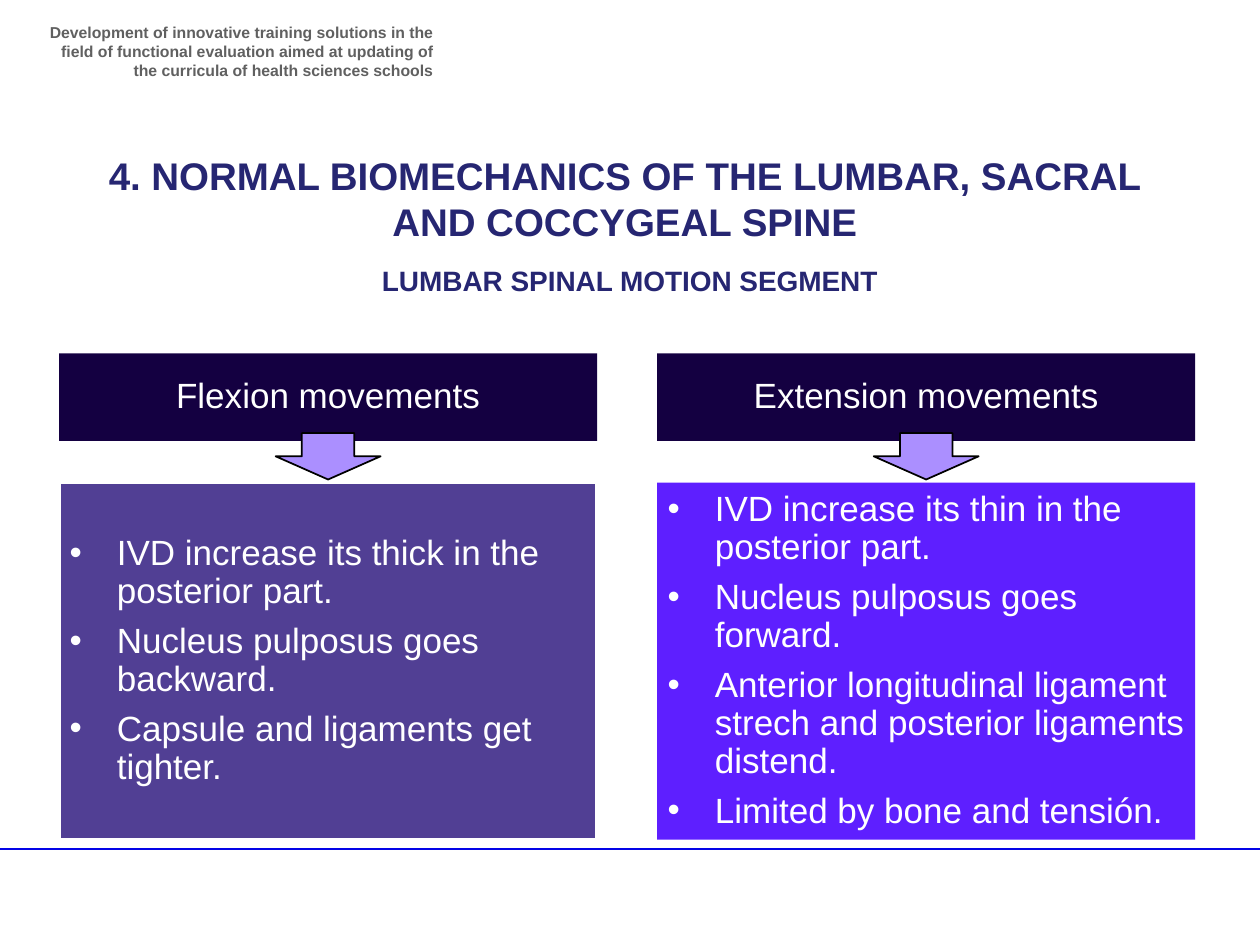
from dataclasses import dataclass

from lxml import etree
from pptx import Presentation
from pptx.dml.color import RGBColor
from pptx.enum import shapes, text
from pptx.oxml.ns import qn
from pptx.util import Pt


@dataclass(frozen=True)
class Theme:
    font: str = "Arial"
    heading: str = "262672"
    project: str = "606060"
    rule: str = "0404E6"
    header: str = "140041"
    flexion: str = "513F94"
    extension: str = "5E1FFF"
    arrow: str = "AB8FFF"
    outline: str = "000000"
    light: str = "FFFFFF"
    title_size: float = 22
    subtitle_size: float = 16
    panel_size: float = 20
    project_size: float = 9


@dataclass(frozen=True)
class Box:
    left: float
    top: float
    width: float
    height: float

    def lengths(self) -> tuple:
        return Pt(self.left), Pt(self.top), Pt(self.width), Pt(self.height)


@dataclass(frozen=True)
class Movement:
    name: str
    effects: tuple[str, ...]
    color: str
    left: float
    border: str | None = None


THEME = Theme()
PANEL_WIDTH = 307.5
PANEL_INSET = 6
BULLET_INDENT = 27
ARROW_WIDTH = 60

MOVEMENTS = (
    Movement(
        "Flexion movements",
        (
            "IVD increase its thick in the posterior part.",
            "Nucleus pulposus goes backward.",
            "Capsule and ligaments get tighter.",
        ),
        THEME.flexion, 33.75, border=THEME.light,
    ),
    Movement(
        "Extension movements",
        (
            "IVD increase its thin in the posterior part.",
            "Nucleus pulposus goes forward.",
            "Anterior longitudinal ligament strech and posterior ligaments distend.",
            "Limited by bone and tensión.",
        ),
        THEME.extension, 375.5,
    ),
)


def set_font(paragraph, size: float, color: str, bold: bool = False) -> None:
    font = paragraph.font
    font.name, font.size, font.bold = THEME.font, Pt(size), bold
    font.color.rgb = RGBColor.from_string(color)


def write_heading(shape, words: str, size: float, color: str, align) -> None:
    frame = shape.text_frame
    frame.word_wrap = True
    frame.auto_size = text.MSO_AUTO_SIZE.NONE
    frame.vertical_anchor = text.MSO_ANCHOR.TOP
    frame.text = words
    frame.paragraphs[0].alignment = align
    set_font(frame.paragraphs[0], size, color, bold=True)


def add_block(slide, kind, box: Box, fill: str, border: str | None = None,
              border_width: float = 1):
    block = slide.shapes.add_shape(kind, *box.lengths())
    block.shadow.inherit = False
    block.fill.solid()
    block.fill.fore_color.rgb = RGBColor.from_string(fill)
    if border:
        block.line.color.rgb = RGBColor.from_string(border)
        block.line.width = Pt(border_width)
    else:
        block.line.fill.background()
    return block


def add_bullet(paragraph) -> None:
    properties = paragraph._p.get_or_add_pPr()
    properties.set("marL", str(Pt(BULLET_INDENT)))
    properties.set("indent", str(-Pt(BULLET_INDENT)))
    color = etree.SubElement(properties, qn("a:buClr"))
    etree.SubElement(color, qn("a:srgbClr"), val=THEME.light)
    etree.SubElement(properties, qn("a:buFont"), typeface=THEME.font)
    etree.SubElement(properties, qn("a:buChar"), char="•")


def write_panel(panel, lines: tuple[str, ...], bulleted: bool) -> None:
    frame = panel.text_frame
    frame.word_wrap = True
    frame.vertical_anchor = text.MSO_ANCHOR.MIDDLE
    frame.margin_left = frame.margin_right = Pt(PANEL_INSET)
    frame.margin_top = frame.margin_bottom = Pt(PANEL_INSET)
    frame.text = "\n".join(lines)
    for index, paragraph in enumerate(frame.paragraphs):
        if bulleted:
            add_bullet(paragraph)
        paragraph.alignment = text.PP_ALIGN.LEFT if bulleted else text.PP_ALIGN.CENTER
        paragraph.line_spacing = 0.9
        if index:
            paragraph.space_before = Pt(7)
        set_font(paragraph, THEME.panel_size, THEME.light)


def add_movement(slide, movement: Movement) -> None:
    """Draw one column: header, effects and the arrow that links them."""
    rectangle = shapes.MSO_SHAPE.RECTANGLE
    header = add_block(slide, rectangle,
                       Box(movement.left, 202, PANEL_WIDTH, 50), THEME.header)
    write_panel(header, (movement.name,), bulleted=False)
    effects = add_block(slide, rectangle,
                        Box(movement.left, 275.75, PANEL_WIDTH, 204),
                        movement.color, movement.border, 2)
    write_panel(effects, movement.effects, bulleted=True)
    arrow_left = movement.left + (PANEL_WIDTH - ARROW_WIDTH) / 2
    add_block(slide, shapes.MSO_SHAPE.DOWN_ARROW,
              Box(arrow_left, 247.5, ARROW_WIDTH, 26.5), THEME.arrow, THEME.outline)


def add_rule(slide) -> None:
    rule = slide.shapes.add_connector(shapes.MSO_CONNECTOR.STRAIGHT,
                                      Pt(-3.5), Pt(485.25), Pt(720), Pt(485.25))
    rule.line.color.rgb = RGBColor.from_string(THEME.rule)
    rule.line.width = Pt(1)
    etree.SubElement(rule._element.spPr, qn("a:effectLst"))


def main() -> None:
    presentation = Presentation()
    presentation.slide_width, presentation.slide_height = Pt(720), Pt(540)
    slide = presentation.slides.add_slide(presentation.slide_layouts[5])

    add_rule(slide)
    project = slide.shapes.add_textbox(*Box(20, 9.5, 234.5, 34).lengths())
    write_heading(project,
                  "Development of innovative training solutions in the ﬁeld of functional "
                  "evaluation aimed at updating of the curricula of health sciences schools",
                  THEME.project_size, THEME.project, text.PP_ALIGN.RIGHT)

    title = slide.shapes.title
    title.left, title.top, title.width, title.height = Box(48, 83, 618, 60.5).lengths()
    write_heading(title, "4. NORMAL BIOMECHANICS OF THE LUMBAR, SACRAL AND COCCYGEAL SPINE",
                  THEME.title_size, THEME.heading, text.PP_ALIGN.CENTER)

    subtitle = slide.shapes.add_textbox(*Box(156, 147, 408, 26.5).lengths())
    write_heading(subtitle, "LUMBAR SPINAL MOTION SEGMENT",
                  THEME.subtitle_size, THEME.heading, text.PP_ALIGN.CENTER)

    for movement in MOVEMENTS:
        add_movement(slide, movement)

    presentation.save("out.pptx")


if __name__ == "__main__":
    main()
